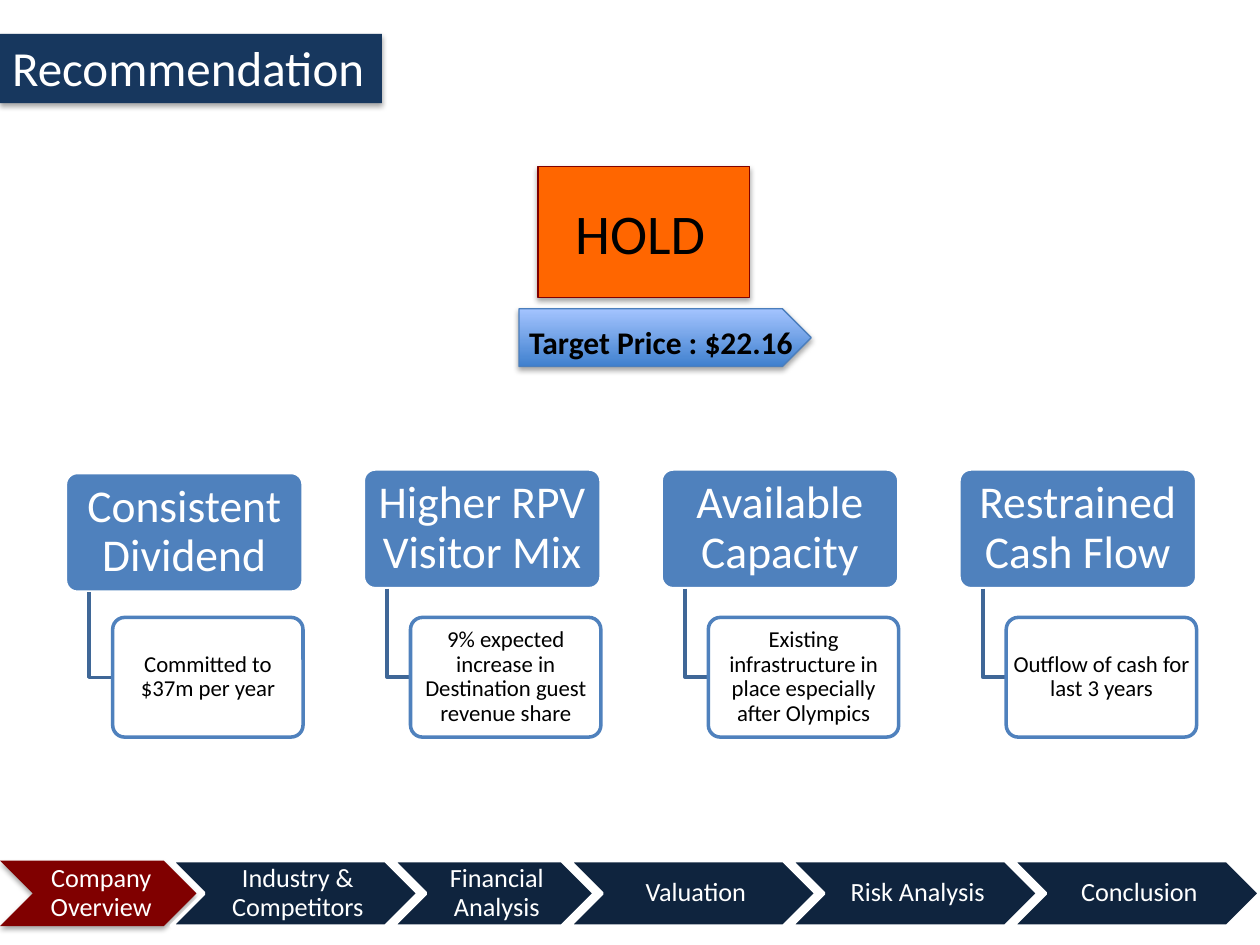
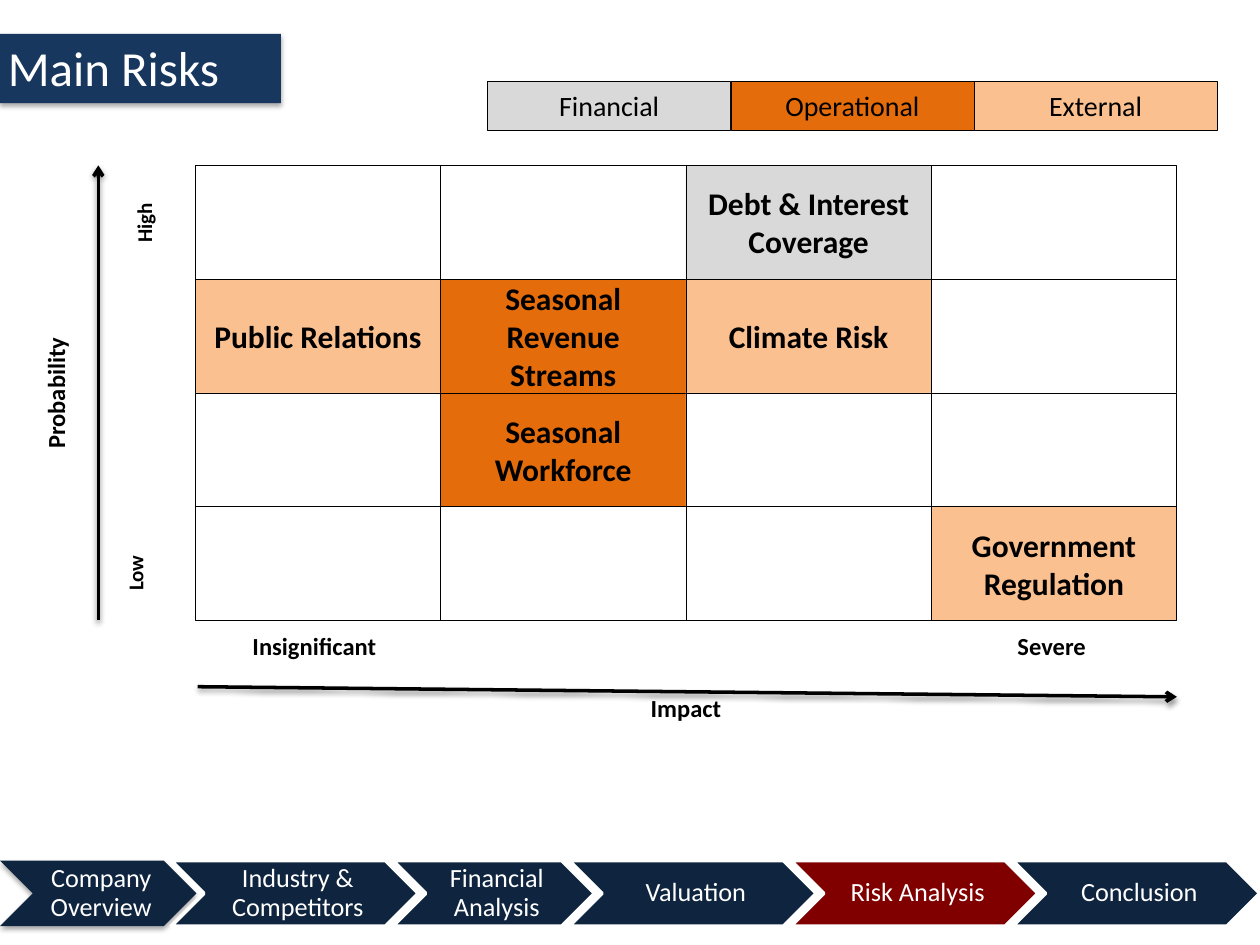
from lxml.etree import SubElement
from pptx import Presentation
from pptx.dml.color import RGBColor
from pptx.enum.shapes import MSO_CONNECTOR, MSO_SHAPE
from pptx.enum.text import MSO_ANCHOR, PP_ALIGN
from pptx.oxml.ns import qn
from pptx.util import Pt

FONT = "Calibri"
WHITE = RGBColor(0xFF, 0xFF, 0xFF)
BLACK = RGBColor(0x00, 0x00, 0x00)
TITLE_BLUE = RGBColor(0x17, 0x37, 0x5E)
NAV_NAVY = RGBColor(0x0F, 0x24, 0x3E)
MAROON = RGBColor(0x80, 0x00, 0x00)
HOLD_ORANGE = RGBColor(0xFF, 0x66, 0x00)
CARD_BLUE = RGBColor(0x4F, 0x81, 0xBD)
BRACKET_BLUE = RGBColor(0x3F, 0x67, 0x97)
PRICE_DARK = RGBColor(0x3F, 0x80, 0xCE)
PRICE_LIGHT = RGBColor(0xA4, 0xC4, 0xFF)
PRICE_EDGE = RGBColor(0x4B, 0x7E, 0xBC)
FINANCIAL = RGBColor(0xD9, 0xD9, 0xD9)
OPERATIONAL = RGBColor(0xE4, 0x6C, 0x0A)
EXTERNAL = RGBColor(0xFA, 0xC0, 0x90)

DEFAULT_INSETS = (7.2, 3.6, 7.2, 3.6)
NAV_TOP, NAV_HEIGHT, NAV_OVERLAP = 491.8, 37.4, 14.4
SECTIONS = [
    ("Company Overview", 112.3),
    ("Industry & Competitors", 141.1),
    ("Financial Analysis", 115.2),
    ("Valuation", 141.1),
    ("Risk Analysis", 141.1),
    ("Conclusion", 141.1),
]

REASONS = [
    ("Consistent Dividend", "Committed to $37m per year", 270),
    ("Higher RPV Visitor Mix",
     "9% expected increase in Destination guest revenue share", 268),
    ("Available Capacity",
     "Existing infrastructure in place especially after Olympics", 268),
    ("Restrained Cash Flow", "Outflow of cash for last 3 years", 268),
]

GRID_LEFT, GRID_TOP, CELL_WIDTH, CELL_HEIGHT = 111.6, 94.5, 140.2, 65
RISKS = {
    (0, 2): ("Debt & Interest Coverage", FINANCIAL),
    (1, 0): ("Public Relations", EXTERNAL),
    (1, 1): ("Seasonal Revenue Streams", OPERATIONAL),
    (1, 2): ("Climate Risk", EXTERNAL),
    (2, 1): ("Seasonal Workforce", OPERATIONAL),
    (3, 3): ("Government Regulation", EXTERNAL),
}
SCALE_LABELS = [
    ("Insignificant", (85.7, 357, 188, 39), 14, 0),
    ("Severe", (507, 357, 188, 39), 14, 0),
    ("Impact", (298, 392.4, 188, 39), 14, 0),
    ("Low", (26, 316, 103.7, 23), 12, 270),
    ("High", (31, 116, 103.7, 23), 12, 270),
    ("Probability", (-70.6, 211.7, 206.6, 26), 14, 270),
]


def write(shape, text, size, color, bold=False, align=PP_ALIGN.CENTER,
          anchor=MSO_ANCHOR.MIDDLE, insets=DEFAULT_INSETS, spacing=None, wrap=True):
    frame = shape.text_frame
    frame.word_wrap = wrap
    frame.vertical_anchor = anchor
    (frame.margin_left, frame.margin_top,
     frame.margin_right, frame.margin_bottom) = map(Pt, insets)
    paragraph = frame.paragraphs[0]
    paragraph.alignment = align
    if spacing:
        paragraph.line_spacing = spacing
    run = paragraph.add_run()
    run.text = text
    run.font.name = FONT
    run.font.size = Pt(size)
    run.font.bold = bold
    run.font.color.rgb = color


def set_line(shape, color, width):
    shape.line.color.rgb = color
    shape.line.width = Pt(width)


def add_block(slide, kind, box, fill, edge=None, edge_width=0.75):
    block = slide.shapes.add_shape(kind, *map(Pt, box))
    block.shadow.inherit = False
    block.fill.solid()
    block.fill.fore_color.rgb = fill
    if edge is None:
        block.line.fill.background()
    else:
        set_line(block, edge, edge_width)
    return block


def cast_shadow(effects, distance=1.8, opacity=35):
    shadow = SubElement(effects, qn("a:outerShdw"), blurRad=str(Pt(3.1)),
                        dist=str(Pt(distance)), dir="5400000", rotWithShape="0")
    tint = SubElement(shadow, qn("a:srgbClr"), val="000000")
    SubElement(tint, qn("a:alpha"), val=str(opacity * 1000))


def shade(block):
    cast_shadow(block._element.spPr.find(qn("a:effectLst")))


def add_title(slide, text, width, indent):
    band = add_block(slide, MSO_SHAPE.RECTANGLE, (0, 19.4, width, 39.6), TITLE_BLUE)
    shade(band)
    write(band, text, 28, WHITE, align=PP_ALIGN.LEFT,
          insets=(indent, 2, 0, 3.6), wrap=False)


def add_navigation(slide, current):
    left = 0
    for index, (section, width) in enumerate(SECTIONS):
        first = index == 0
        step = add_block(slide, MSO_SHAPE.CHEVRON, (left, NAV_TOP, width, NAV_HEIGHT),
                         MAROON if section == current else NAV_NAVY,
                         None if first else WHITE, 2)
        if first:
            shade(step)
        write(step, section, 15, WHITE, insets=(5, 1.5, 1.5, 1.5), spacing=0.9)
        left += width - NAV_OVERLAP


def add_verdict(slide):
    hold = add_block(slide, MSO_SHAPE.RECTANGLE, (307.4, 95, 121, 74.9),
                     HOLD_ORANGE, MAROON)
    shade(hold)
    write(hold, "HOLD", 32, BLACK, insets=(5, 3.6, 9, 3.6))

    price = add_block(slide, MSO_SHAPE.PENTAGON, (296.6, 176.4, 167, 33.1),
                      PRICE_DARK, PRICE_EDGE)
    price.fill.gradient()
    price.fill.gradient_angle = 90
    for stop, color in zip(price.fill.gradient_stops, (PRICE_DARK, PRICE_LIGHT)):
        stop.color.rgb = color
    shade(price)
    write(price, "Target Price : $22.16", 18, BLACK, bold=True,
          align=PP_ALIGN.LEFT, insets=(5.8, 5, 0, 0), wrap=False)


def add_reason(slide, left, top, heading, detail):
    header_height, detail_top, detail_height = 68.4, 352.8, 68.4
    header = add_block(slide, MSO_SHAPE.ROUNDED_RECTANGLE,
                       (left, top, 135.9, header_height), CARD_BLUE, WHITE, 2)
    write(header, heading, 26, WHITE, insets=(3.6, 2.5, 3.6, 2.5), spacing=0.9)

    stem, arm_end = left + 13.6, left + 27
    arm_y = detail_top + detail_height / 2
    path = slide.shapes.build_freeform(Pt(stem), Pt(top + header_height))
    path.add_line_segments([(Pt(stem), Pt(arm_y)), (Pt(arm_end), Pt(arm_y))],
                           close=False)
    bracket = path.convert_to_shape()
    bracket.shadow.inherit = False
    bracket.fill.background()
    set_line(bracket, BRACKET_BLUE, 2)

    note = add_block(slide, MSO_SHAPE.ROUNDED_RECTANGLE,
                     (arm_end, detail_top, 108.8, detail_height), WHITE, CARD_BLUE, 2)
    write(note, detail, 13, BLACK, insets=(2, 1.5, 2, 1.5), spacing=0.9)
    for card in (header, note):
        card.adjustments[0] = 0.1


def add_legend(slide):
    entries = [("Financial", FINANCIAL), ("Operational", OPERATIONAL),
               ("External", EXTERNAL)]
    for index, (category, color) in enumerate(entries):
        key = add_block(slide, MSO_SHAPE.RECTANGLE,
                        (278.6 + 139 * index, 46.4, 139, 28), color, BLACK, 0.25)
        write(key, category, 16, BLACK)


def add_scale_labels(slide):
    for text, box, size, rotation in SCALE_LABELS:
        label = add_block(slide, MSO_SHAPE.RECTANGLE, box, WHITE)
        label.rotation = rotation
        write(label, text, size, BLACK, bold=True, anchor=MSO_ANCHOR.TOP)


def add_risk_grid(slide):
    for row in range(4):
        for column in range(4):
            risk, color = RISKS.get((row, column), (None, WHITE))
            cell = add_block(slide, MSO_SHAPE.RECTANGLE,
                             (GRID_LEFT + column * CELL_WIDTH,
                              GRID_TOP + row * CELL_HEIGHT,
                              CELL_WIDTH, CELL_HEIGHT), color, BLACK, 0.25)
            if risk:
                write(cell, risk, 18, BLACK, bold=True)


def add_axis(slide, start, end):
    axis = slide.shapes.add_connector(MSO_CONNECTOR.STRAIGHT, *map(Pt, start + end))
    set_line(axis, BLACK, 2)
    properties = axis._element.spPr
    SubElement(properties.find(qn("a:ln")), qn("a:tailEnd"), type="arrow")
    cast_shadow(SubElement(properties, qn("a:effectLst")), 1.6, 38)


def build_recommendation(slide):
    add_title(slide, "Recommendation", 218.2, 7)
    add_verdict(slide)
    add_navigation(slide, "Company Overview")
    for index, (heading, detail, top) in enumerate(REASONS):
        add_reason(slide, 37.4 + 170.2 * index, top, heading, detail)


def build_main_risks(slide):
    add_title(slide, "Main Risks", 160.6, 4.5)
    add_legend(slide)
    add_scale_labels(slide)
    add_risk_grid(slide)
    add_axis(slide, (56.2, 354.3), (56.2, 94.5))
    add_axis(slide, (113, 392.4), (672.5, 398.2))
    add_navigation(slide, "Risk Analysis")


def main():
    deck = Presentation()
    deck.slide_width, deck.slide_height = Pt(720), Pt(540)
    blank = deck.slide_layouts[6]
    for build in (build_recommendation, build_main_risks):
        build(deck.slides.add_slide(blank))
    deck.save("out.pptx")


if __name__ == "__main__":
    main()
